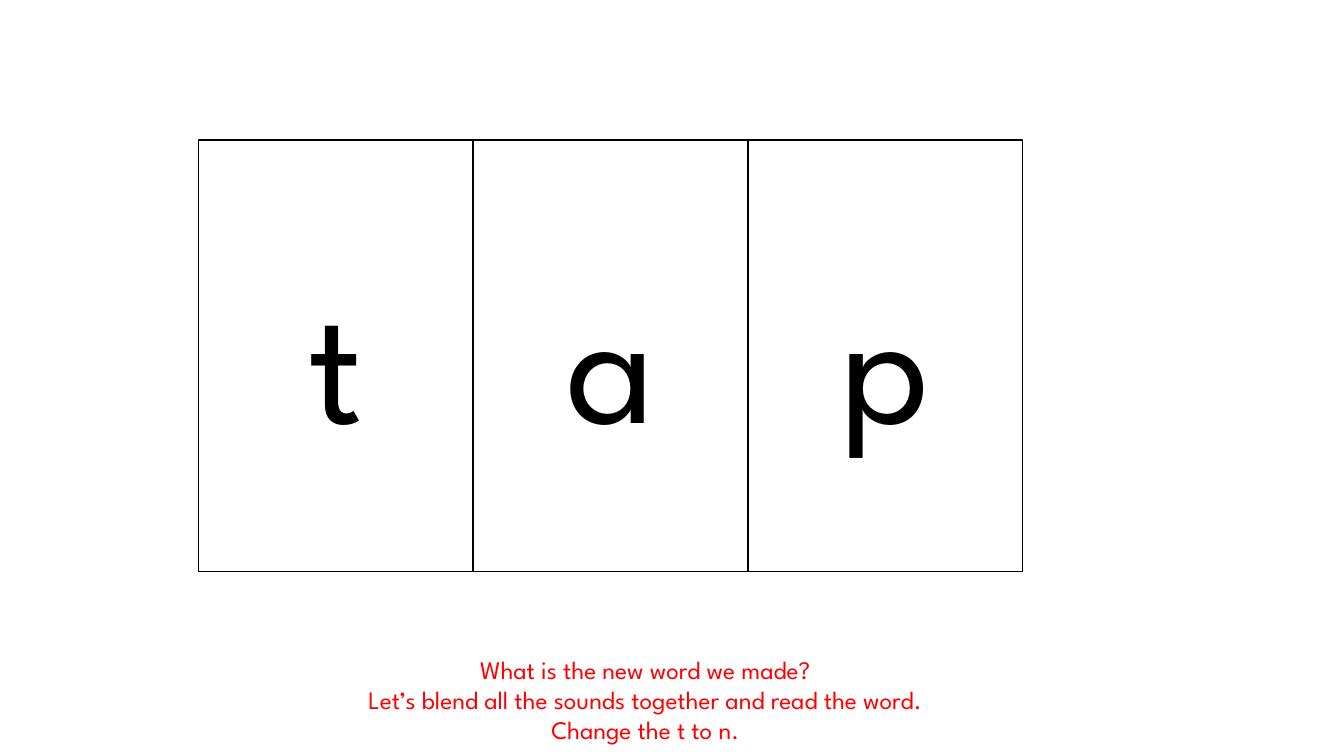
import dataclasses
import typing

import pptx
import pptx.dml.color
import pptx.enum.shapes
import pptx.enum.text
import pptx.util

Inches = pptx.util.Inches
Pt = pptx.util.Pt
RGB = pptx.dml.color.RGBColor


@dataclasses.dataclass(frozen=True)
class Theme:
    face: str = "League Spartan"
    ink: RGB = RGB(0, 0, 0)
    paper: RGB = RGB(255, 255, 255)
    cue: RGB = RGB(255, 0, 0)
    big: int = 120
    small: int = 18


@dataclasses.dataclass(frozen=True)
class Tile:
    letter: str
    left: float


THEME = Theme()
TOP, WIDTH, HEIGHT = 1.39, 2.72, 4.28
START, STEP = 1.97, 2.725
TILES = [Tile(letter, START + i * STEP) for i, letter in enumerate("tap")]
CUES = [
    "What is the new word we made?",
    "Let’s blend all the sounds together and read the word.",
    "Change the t to n.",
]


def write(frame, lines: typing.Sequence[str], size: int, color: RGB) -> None:
    """Fill a text frame with centred lines."""
    frame.word_wrap = True
    form = {"name": THEME.face, "size": Pt(size)}
    for i, line in enumerate(lines):
        para = frame.add_paragraph() if i else frame.paragraphs[0]
        para.alignment = pptx.enum.text.PP_ALIGN.CENTER
        run = para.add_run()
        run.text = line
        for key, value in form.items():
            setattr(run.font, key, value)
        run.font.color.rgb = color


def draw_tile(slide, tile: Tile) -> None:
    """Draw one letter box."""
    box = slide.shapes.add_shape(
        pptx.enum.shapes.MSO_SHAPE.RECTANGLE,
        Inches(tile.left), Inches(TOP), Inches(WIDTH), Inches(HEIGHT))
    box.shadow.inherit = False
    box.fill.solid()
    box.fill.fore_color.rgb = THEME.paper
    box.line.color.rgb = THEME.ink
    box.line.width = Pt(1)
    box.text_frame.vertical_anchor = pptx.enum.text.MSO_ANCHOR.MIDDLE
    write(box.text_frame, [tile.letter], THEME.big, THEME.ink)


def draw_cues(slide) -> None:
    """Add the teacher's prompts."""
    box = slide.shapes.add_textbox(
        Inches(1.06), Inches(6.44), Inches(10.68), Inches(1.01))
    box.text_frame.auto_size = pptx.enum.text.MSO_AUTO_SIZE.SHAPE_TO_FIT_TEXT
    write(box.text_frame, CUES, THEME.small, THEME.cue)


def main() -> None:
    deck = pptx.Presentation()
    deck.slide_width, deck.slide_height = Inches(13.33), Inches(7.5)
    slide = deck.slides.add_slide(deck.slide_layouts[6])

    # Letter boxes
    for tile in TILES:
        draw_tile(slide, tile)

    # Prompts below
    draw_cues(slide)

    deck.save("out.pptx")


if __name__ == "__main__":
    main()
